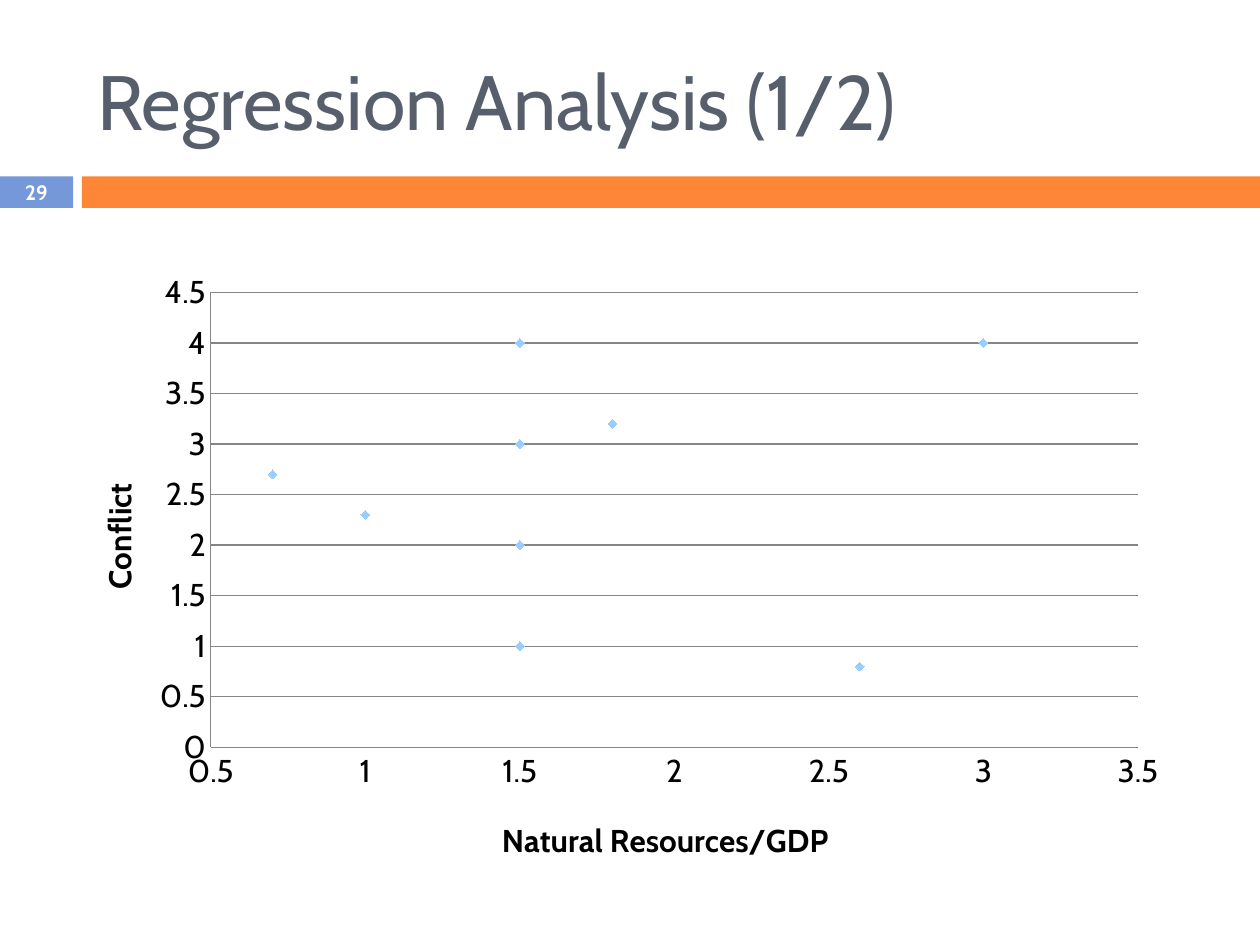
from dataclasses import dataclass

from lxml import etree
from pptx import Presentation
from pptx.chart.data import XyChartData
from pptx.dml.color import RGBColor
from pptx.enum.chart import XL_CHART_TYPE, XL_MARKER_STYLE, XL_TICK_MARK
from pptx.enum.shapes import MSO_SHAPE
from pptx.enum.text import MSO_ANCHOR, PP_ALIGN
from pptx.oxml.ns import qn
from pptx.util import Inches, Pt

SCATTER = XL_CHART_TYPE.XY_SCATTER
DIAMOND = XL_MARKER_STYLE.DIAMOND
NO_TICK = XL_TICK_MARK.NONE
RECT = MSO_SHAPE.RECTANGLE
MIDDLE = MSO_ANCHOR.MIDDLE
LEFT, CENTER = PP_ALIGN.LEFT, PP_ALIGN.CENTER


@dataclass(frozen=True)
class Theme:
    font: str = "Cabin"
    blue: str = "7598D9"
    orange: str = "FE8637"
    slate: str = "575F6D"
    white: str = "FFFFFF"
    black: str = "000000"
    grid: str = "868686"
    mark: str = "99CCFF"
    head: float = 44
    label: float = 18
    page: float = 11.9


THEME = Theme()
POINTS = [(0.7, 2.7), (1.8, 3.2), (2.6, 0.8), (3, 4), (1.5, 1),
          (1.5, 4), (1.5, 2), (1.5, 3), (1, 2.3)]


def color(code):
    return RGBColor.from_string(code)


def style(font, size, code, bold=False):
    font.name = THEME.font
    font.size = Pt(size)
    font.bold = bold
    font.color.rgb = color(code)


def write(frame, text, size, code, align, bold=False):
    frame.word_wrap = True
    frame.vertical_anchor = MIDDLE
    para = frame.paragraphs[0]
    para.alignment = align
    run = para.add_run()
    run.text = text
    style(run.font, size, code, bold)


def add_title(slide, text):
    title = slide.shapes.title
    title.left, title.top = Inches(0.67), Inches(0.25)
    title.width, title.height = Inches(8.92), Inches(1.08)
    write(title.text_frame, text, THEME.head, THEME.slate, LEFT)


def add_bar(slide, left, width, code):
    bar = slide.shapes.add_shape(
        RECT, Inches(left), Inches(1.4), Inches(width), Inches(0.25))
    bar.shadow.inherit = False
    bar.fill.solid()
    bar.fill.fore_color.rgb = color(code)
    bar.line.fill.background()


def add_page(slide, text):
    box = slide.shapes.add_textbox(
        Inches(0), Inches(1.39), Inches(0.58), Inches(0.27))
    frame = box.text_frame
    frame.margin_left = frame.margin_right = 0
    frame.margin_top = frame.margin_bottom = 0
    write(frame, text, THEME.page, THEME.white, CENTER, True)


def place(node, index, inner=False, **spots):
    for old in node.findall(qn("c:layout")):
        node.remove(old)
    layout = etree.Element(qn("c:layout"))
    manual = etree.SubElement(layout, qn("c:manualLayout"))
    pairs = [("layoutTarget", "inner")] if inner else []
    pairs += [("xMode", "edge"), ("yMode", "edge"), *spots.items()]
    for tag, value in pairs:
        etree.SubElement(manual, qn("c:" + tag)).set("val", str(value))
    node.insert(index, layout)


def set_axis(axis, text, low, high, x, y):
    axis.minimum_scale, axis.maximum_scale = low, high
    axis.major_unit = 0.5
    axis.major_tick_mark = axis.minor_tick_mark = NO_TICK
    axis.format.line.color.rgb = color(THEME.grid)
    style(axis.tick_labels.font, THEME.label, THEME.black)
    title = axis.axis_title
    run = title.text_frame.paragraphs[0].add_run()
    run.text = text
    style(run.font, THEME.label, THEME.black, True)
    place(title._element, 1, x=x, y=y)


def add_plot(slide):
    data = XyChartData()
    series = data.add_series("Series 1")
    for x, y in POINTS:
        series.add_data_point(x, y)
    chart = slide.shapes.add_chart(
        SCATTER, Inches(0.46), Inches(2.07),
        Inches(8.92), Inches(4.92), data).chart
    chart.has_legend = chart.has_title = False
    style(chart.font, THEME.label, THEME.black)

    across, up = chart.category_axis, chart.value_axis
    set_axis(across, "Natural Resources/GDP", 0.5, 3.5, 0.39, 0.89)
    set_axis(up, "Conflict", 0, 4.5, 0.03, 0.35)
    across.has_major_gridlines = False
    up.has_major_gridlines = True
    up.major_gridlines.format.line.color.rgb = color(THEME.grid)

    plot = chart.plots[0]
    plot.vary_by_categories = False
    dots = plot.series[0]
    dots.smooth = False
    dots.format.line.fill.background()
    dots.marker.style = DIAMOND
    dots.marker.size = 5
    dots.marker.format.fill.solid()
    dots.marker.format.fill.fore_color.rgb = color(THEME.mark)
    dots.marker.format.line.fill.background()
    area = chart._chartSpace.find(".//" + qn("c:plotArea"))
    place(area, 0, True, x=0.136, y=0.051, w=0.825, h=0.734)


def main():
    deck = Presentation()
    deck.slide_width, deck.slide_height = Inches(10), Inches(7.5)
    slide = deck.slides.add_slide(deck.slide_layouts[5])
    add_bar(slide, 0, 0.58, THEME.blue)
    add_bar(slide, 0.65, 9.35, THEME.orange)
    add_title(slide, "Regression Analysis (1/2)")
    add_plot(slide)
    add_page(slide, "29")
    deck.save("out.pptx")


if __name__ == "__main__":
    main()
